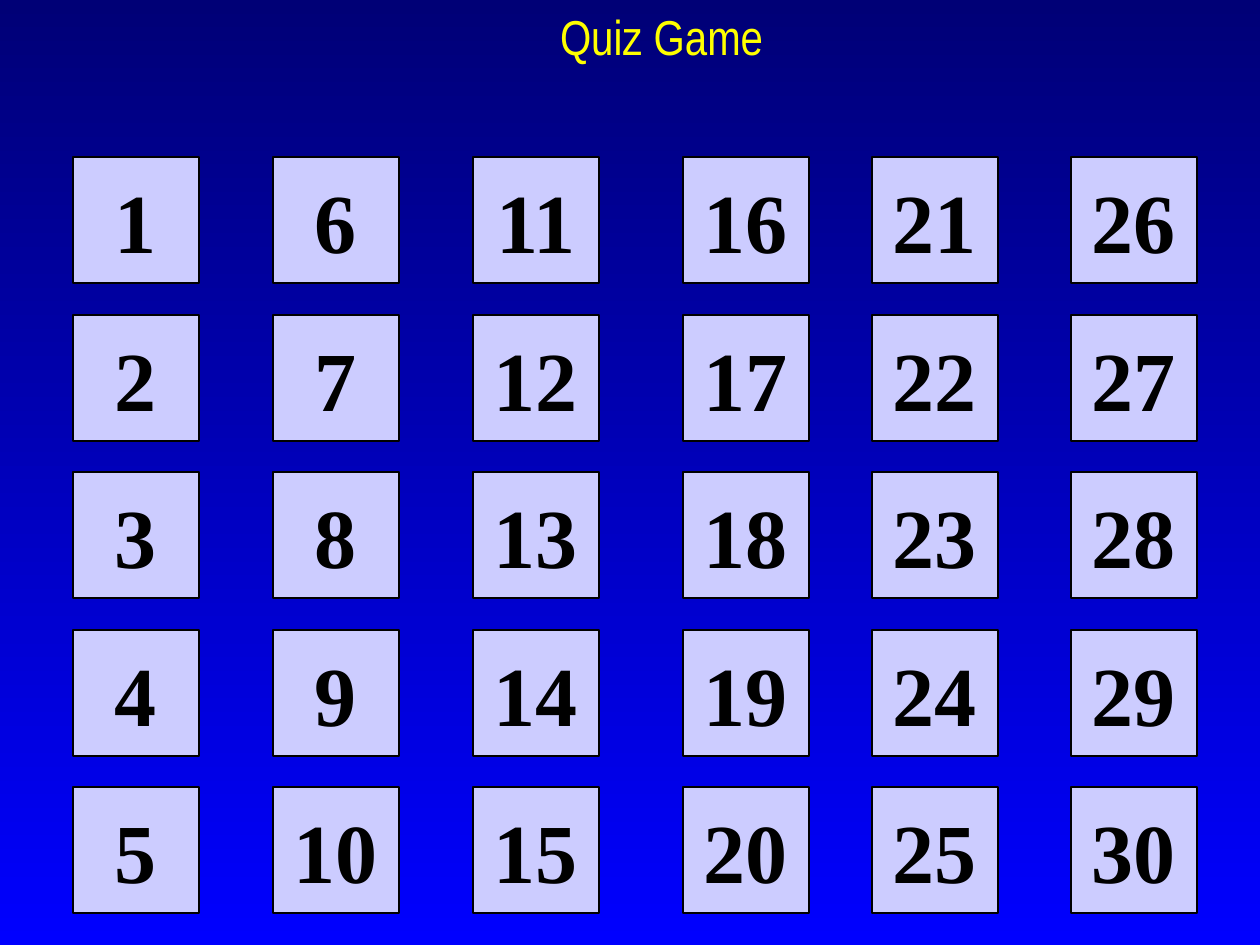
from pptx import Presentation
from pptx.dml.color import RGBColor as Rgb
from pptx.enum.shapes import MSO_SHAPE as Preset
from pptx.enum.text import MSO_ANCHOR as Anchor, MSO_AUTO_SIZE as AutoSize, PP_ALIGN as Align
from pptx.util import Pt

PX = 914400 // 126
THEME = {
    "sky_top": Rgb.from_string("000076"),
    "sky_bottom": Rgb.from_string("0000FF"),
    "tile": Rgb.from_string("CCCCFF"),
    "ink": Rgb.from_string("000000"),
    "heading": Rgb.from_string("FFFF00"),
    "outline": Pt(0.75),
    "heading_font": {"name": "Arial Narrow", "size": Pt(28), "bold": False},
    "number_font": {"name": "Times New Roman", "size": Pt(48), "bold": True},
}
COLUMN_LEFTS = [73, 273, 473, 683, 872, 1071]
ROWS = 5
TILE = 126
ROW_STEP = TILE * 5 // 4


def place(holder, left, top, width, height):
    box = {"left": left, "top": top, "width": width, "height": height}
    for side, length in box.items():
        setattr(holder, side, length * PX)


def write(holder, words, font_format, color, anchor):
    frame = holder.text_frame
    frame.text = words
    frame_format = {"word_wrap": False, "auto_size": AutoSize.NONE, "vertical_anchor": anchor}
    for key, value in frame_format.items():
        setattr(frame, key, value)
    line = frame.paragraphs[0]
    line.alignment = Align.CENTER
    font = line.runs[0].font
    for key, value in font_format.items():
        setattr(font, key, value)
    font.color.rgb = color


deck = Presentation()
deck.slide_width = 1260 * PX
deck.slide_height = 945 * PX
board = deck.slides.add_slide(deck.slide_layouts[5])

sky = board.background.fill
sky.gradient()
sky.gradient_angle = 270
for stop, shade in zip(sky.gradient_stops, ("sky_top", "sky_bottom")):
    stop.color.rgb = THEME[shade]

heading = board.shapes.title
place(heading, 357, 0, 609, 105)
write(heading, "Quiz Game", THEME["heading_font"], THEME["heading"], Anchor.TOP)

for column, left in enumerate(COLUMN_LEFTS):
    for row in range(ROWS):
        top = TILE * 5 * (row + 1) // 4
        tile = board.shapes.add_shape(Preset.ACTION_BUTTON_CUSTOM, 0, 0, 0, 0)
        place(tile, left, top, TILE, TILE)
        tile.shadow.inherit = False
        tile.fill.solid()
        tile.fill.fore_color.rgb = THEME["tile"]
        tile.line.color.rgb = THEME["ink"]
        tile.line.width = THEME["outline"]
        number = column * ROWS + row + 1
        write(tile, str(number), THEME["number_font"], THEME["ink"], Anchor.MIDDLE)

deck.save("out.pptx")
